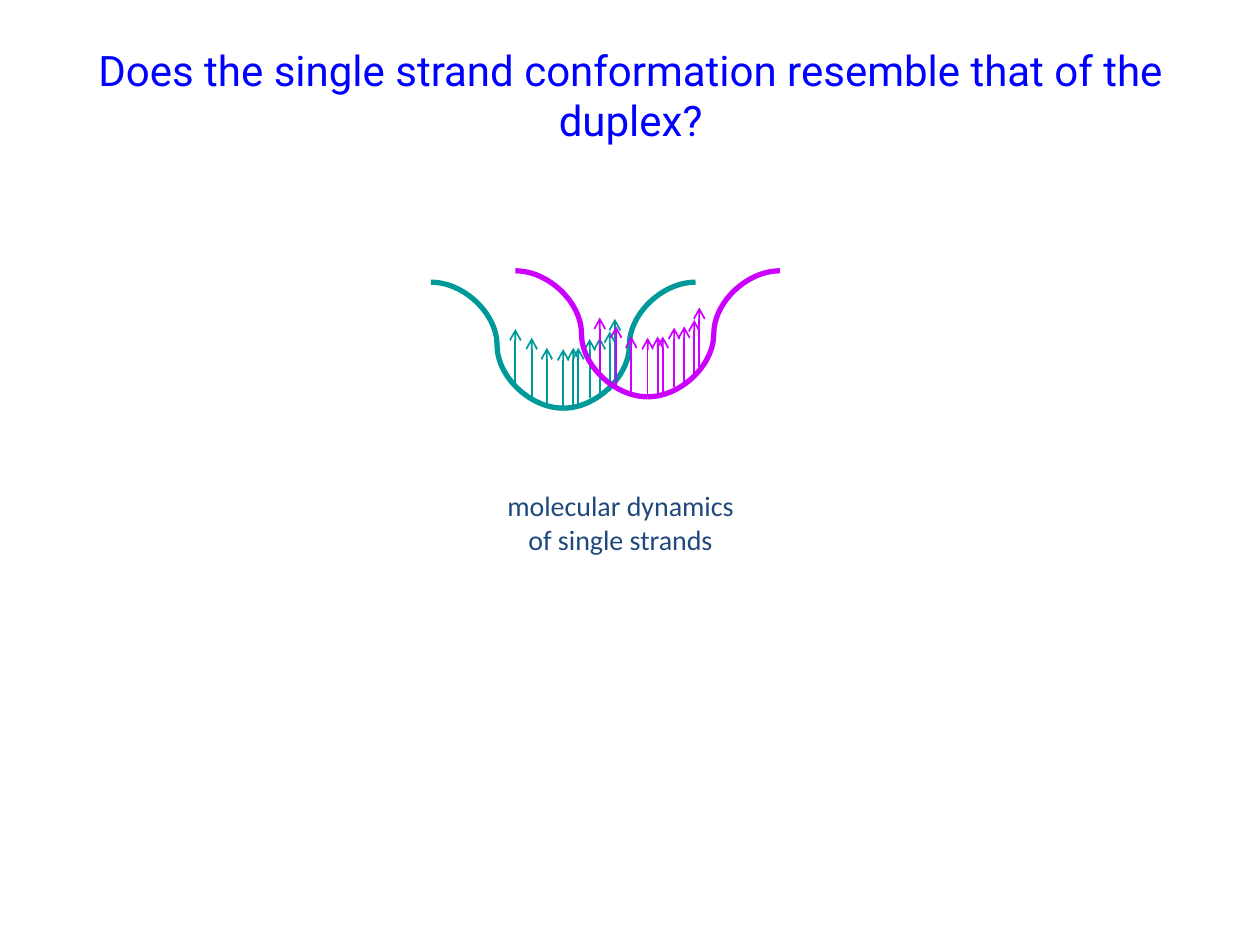
from dataclasses import dataclass

from lxml.etree import SubElement
from pptx import Presentation
from pptx.dml.color import RGBColor
from pptx.enum.shapes import MSO_CONNECTOR
from pptx.enum.text import MSO_ANCHOR, PP_ALIGN
from pptx.oxml.ns import qn
from pptx.util import Inches, Pt


@dataclass(frozen=True)
class Theme:
    title_color: str = "0000FF"
    caption_color: str = "1F497D"
    teal: str = "009999"
    purple: str = "CC00FF"
    title_font: str = "Roboto"
    caption_font: str = "Calibri"
    title_size: int = 24
    caption_size: int = 16
    backbone_width: int = 3
    base_width: int = 1


theme = Theme()


def add_text(box, text, font, size, color, anchor):
    text_box = slide.shapes.add_textbox(*(Inches(value) for value in box))
    frame = text_box.text_frame
    frame.word_wrap = True
    frame.vertical_anchor = anchor
    paragraph = frame.paragraphs[0]
    paragraph.text = text
    paragraph.alignment = PP_ALIGN.CENTER
    paragraph.font.name = font
    paragraph.font.size = Pt(size)
    paragraph.font.color.rgb = RGBColor.from_string(color)


def add_line(group, kind, start, end, color, width):
    """Add a shadowless connector to a group and return its line format."""
    connector = group.shapes.add_connector(
        kind, *(Inches(value) for value in (*start, *end)))
    connector.line.color.rgb = RGBColor.from_string(color)
    connector.line.width = Pt(width)
    SubElement(connector._element.spPr, qn("a:effectLst"))
    return connector.line


presentation = Presentation()
presentation.slide_width = Inches(10)
presentation.slide_height = Inches(7.5)
slide = presentation.slides.add_slide(presentation.slide_layouts[6])

add_text((0.17, 0.5, 9.67, 0.5),
         "Does the single strand conformation resemble that of the duplex?",
         theme.title_font, theme.title_size, theme.title_color, MSO_ANCHOR.MIDDLE)

# Each strand is a mirrored pair of curves that meet at its lowest point.
strands = [(4.47, 3.24, theme.teal), (5.14, 3.15, theme.purple)]
half_width, strand_height, base_length = 1.05, 1, 0.47

# Foot of each base arrow, measured right and up from the lowest point.
base_feet = [(0.12, 0.01), (-0.13, 0.01), (-0.25, 0.09), (-0.38, 0.16), (0, 0),
             (0.08, 0.01), (0.41, 0.24), (0.37, 0.14), (0.29, 0.09), (0.21, 0.08)]

for center, bottom, color in strands:
    strand = slide.shapes.add_group_shape()
    for side in (1, -1):
        add_line(strand, MSO_CONNECTOR.CURVE, (center, bottom),
                 (center + side * half_width, bottom - strand_height),
                 color, theme.backbone_width)
    for right, up in base_feet:
        x, foot = center + right, bottom - up
        line = add_line(strand, MSO_CONNECTOR.STRAIGHT, (x, foot - base_length),
                        (x, foot), color, theme.base_width)
        SubElement(line._get_or_add_ln(), qn("a:headEnd"), type="arrow")

add_text((3.84, 3.83, 2.17, 0.64), "molecular dynamics of single strands",
         theme.caption_font, theme.caption_size, theme.caption_color, MSO_ANCHOR.TOP)

presentation.save("out.pptx")
